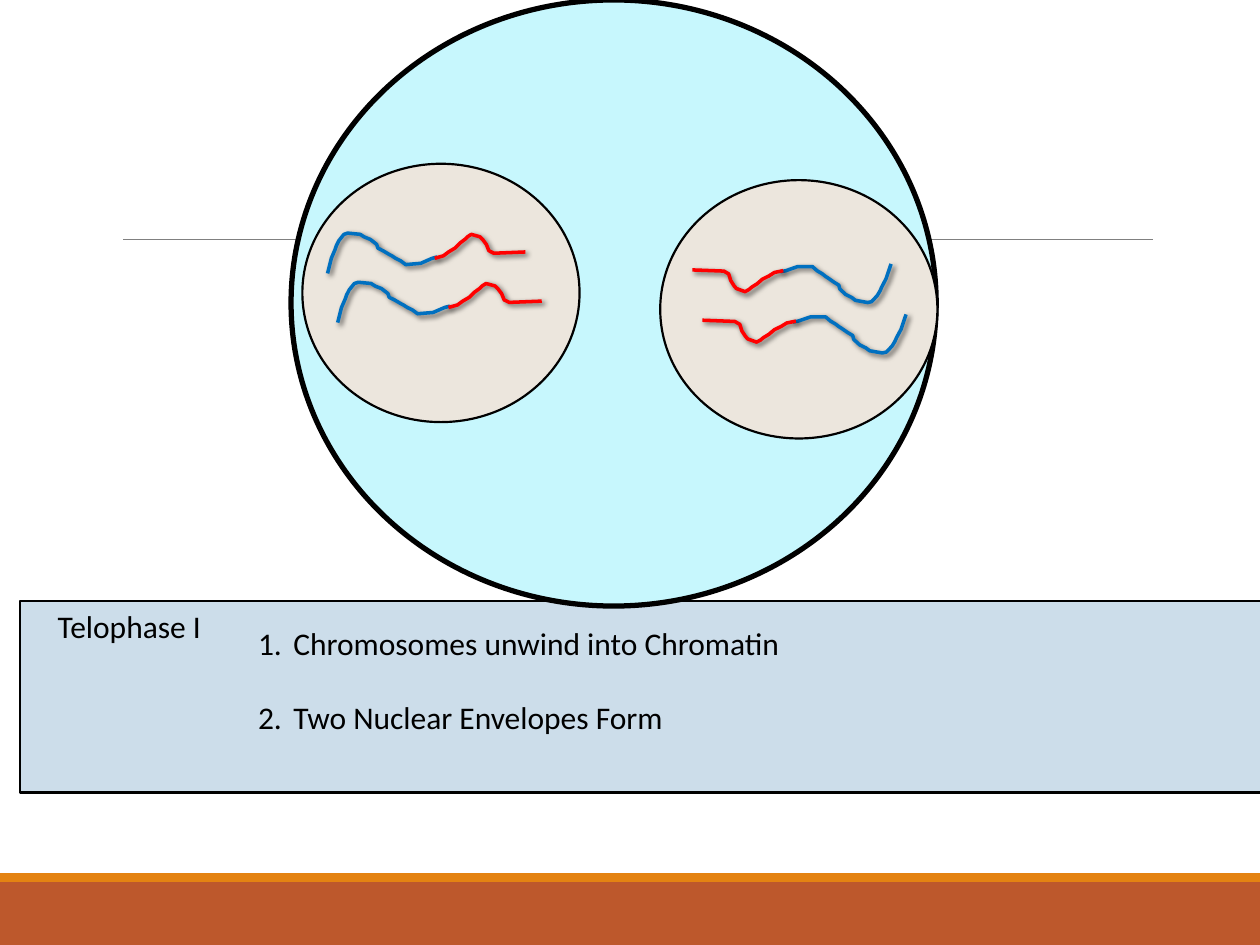
from lxml import etree
from pptx import Presentation
from pptx.dml.color import RGBColor
from pptx.enum import shapes
from pptx.oxml import ns
from pptx.util import Inches, Pt

COLORS = {
    "band": "BD582C", "stripe": "E48312", "rule": "808080", "panel": "CCDDEA",
    "cell": "C7F7FD", "nucleus": "ECE6DD", "ink": "000000",
    "blue": "0070C0", "red": "FF0000",
}

deck = Presentation()
deck.slide_width, deck.slide_height = Inches(10), Inches(7.5)
page = deck.slides.add_slide(deck.slide_layouts[6])


def add_figure(kind, left, top, width, height, fill, line_width=None):
    figure = page.shapes.add_shape(
        kind, Inches(left), Inches(top), Inches(width), Inches(height))
    figure.shadow.inherit = False
    figure.fill.solid()
    figure.fill.fore_color.rgb = RGBColor.from_string(COLORS[fill])
    if line_width:
        figure.line.color.rgb = RGBColor.from_string(COLORS["ink"])
        figure.line.width = Pt(line_width)
    else:
        figure.line.fill.background()


def add_text(lines, left, top, width, height, size=18, numbered=False, gap=0):
    box = page.shapes.add_textbox(
        Inches(left), Inches(top), Inches(width), Inches(height))
    box.text_frame.word_wrap = True
    box.text_frame.text = "\n".join(lines)
    for para in box.text_frame.paragraphs:
        para.space_after = Pt(gap)
        span = para.runs[0]
        span.font.name, span.font.size = "Calibri", Pt(size)
        span.font.color.rgb = RGBColor.from_string(COLORS["ink"])
        if numbered:
            props = para._p.get_or_add_pPr()
            props.set("marL", str(Inches(0.28)))
            props.set("indent", str(-Inches(0.28)))
            etree.SubElement(props, ns.qn("a:buFont"), typeface="+mj-lt")
            etree.SubElement(props, ns.qn("a:buAutoNum"), type="arabicPeriod")


# Footer bands and the rule behind the cell
add_figure(shapes.MSO_SHAPE.RECTANGLE, 0, 7, 10, 0.5, "band")
add_figure(shapes.MSO_SHAPE.RECTANGLE, 0, 6.93, 10, 0.07, "stripe")
rule = page.shapes.add_connector(
    shapes.MSO_CONNECTOR.STRAIGHT,
    Inches(0.98), Inches(1.9), Inches(9.15), Inches(1.9))
rule.line.color.rgb = RGBColor.from_string(COLORS["rule"])
rule.line.width = Pt(0.5)
etree.SubElement(rule._element.spPr, ns.qn("a:effectLst"))

# Description panel
add_figure(shapes.MSO_SHAPE.RECTANGLE, 0.16, 4.77, 9.88, 1.52, "panel", 1.25)
add_text(["Chromosomes unwind into Chromatin", "Two Nuclear Envelopes Form"],
         1.95, 4.9, 6.2, 2.22, numbered=True, gap=21)
add_text(["Telophase I"], 0.36, 4.77, 1.59, 0.4)

# Cell with two nuclei
add_figure(shapes.MSO_SHAPE.OVAL, 2.31, 0, 5.12, 4.81, "cell", 3)
for left, top in [(5.24, 1.43), (2.4, 1.3)]:
    add_figure(shapes.MSO_SHAPE.OVAL, left, top, 2.2, 2.05, "nucleus", 1.25)

# Chromatin strands: each outline is in hundredths of an inch
OUTLINES = {
    "blue": [(0, 32), (3, 20), (6, 13), (7, 10), (9, 6), (13, 1), (16, 0),
             (26, 1), (29, 3), (34, 5), (39, 9), (40, 12), (44, 14), (49, 17),
             (51, 18), (54, 20), (58, 22), (62, 25), (74, 24), (83, 20),
             (87, 19)],
    "red": [(0, 19), (7, 17), (11, 14), (16, 11), (20, 7), (24, 4), (26, 2),
            (29, 0), (36, 2), (38, 4), (41, 8), (43, 13), (47, 15), (72, 14)],
}
STRANDS = [  # color, left, top, width, rotation
    ("blue", 2.6, 1.85, 0.87, 0), ("red", 3.45, 1.86, 0.72, 0),
    ("blue", 2.68, 2.24, 0.89, 0), ("red", 3.56, 2.25, 0.74, 0),
    ("blue", 6.19, 2.06, 0.87, 184.5), ("red", 5.49, 2.12, 0.72, 184.5),
    ("blue", 6.29, 2.46, 0.89, 184.5), ("red", 5.57, 2.52, 0.74, 184.5),
]
for color, left, top, width, rotation in STRANDS:
    start, *rest = OUTLINES[color]
    builder = page.shapes.build_freeform(*start, scale=Inches(0.01))
    builder.add_line_segments(rest, close=False)
    strand = builder.convert_to_shape(Inches(left), Inches(top))
    strand.width = Inches(width)
    strand.rotation = rotation
    strand.fill.background()
    strand.line.color.rgb = RGBColor.from_string(COLORS[color])
    strand.line.width = Pt(2)
    etree.SubElement(strand.line._get_or_add_ln(), ns.qn("a:round"))
    strand.shadow.inherit = False
    effects = strand._element.spPr.find(ns.qn("a:effectLst"))
    shadow = etree.SubElement(
        effects, ns.qn("a:outerShdw"), blurRad=str(Pt(3)), dist=str(Pt(2)),
        dir=str(45 * 60000), rotWithShape="0")
    shade = etree.SubElement(shadow, ns.qn("a:srgbClr"), val=COLORS["ink"])
    etree.SubElement(shade, ns.qn("a:alpha"), val="60000")

deck.save("out.pptx")
